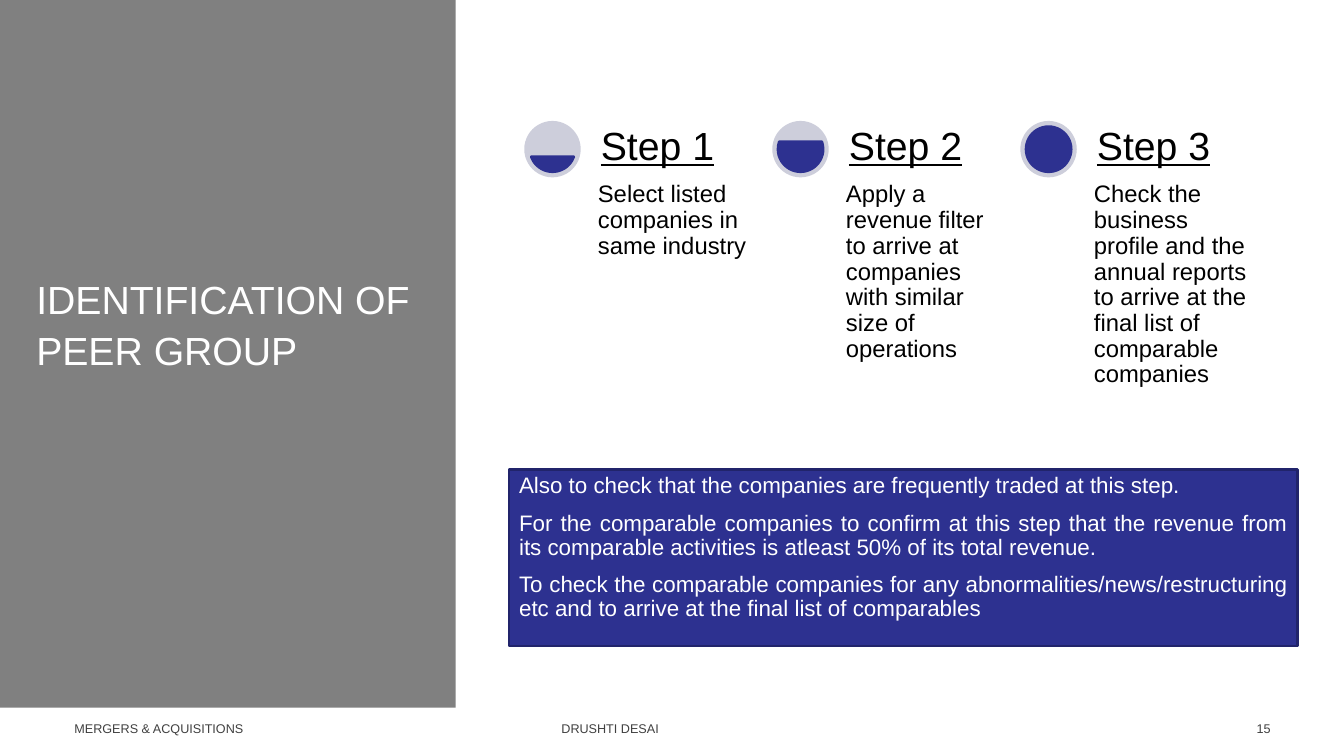
import math

import pptx
import pptx.dml.color
import pptx.enum.shapes
import pptx.enum.text
import pptx.oxml
import pptx.oxml.ns
import pptx.util
from pptx.util import Inches

ALIGN = pptx.enum.text.PP_ALIGN
ANCHOR = pptx.enum.text.MSO_ANCHOR
SHAPE = pptx.enum.shapes.MSO_SHAPE

NAVY, NAVY_EDGE, PALE = "2D3190", "21246B", "CDCEDB"
GREY, WHITE, BLACK, FOOTER_GREY = "808080", "FFFFFF", "000000", "404040"

STEPS = [
    ("Step 1", "Select listed companies in same industry"),
    ("Step 2", "Apply a revenue filter to arrive at companies with similar size of operations"),
    ("Step 3", "Check the business profile and the annual reports to arrive at the final list "
               "of comparable companies"),
]
CHECKS = [
    "Also to check that the companies are frequently traded at this step.",
    "For the comparable companies to confirm at this step that the revenue from its "
    "comparable activities is atleast 50% of its total revenue.",
    "To check the comparable companies for any abnormalities/news/restructuring etc and to "
    "arrive at the final list of comparables",
]


def color(hex_value):
    """Return the colour for a hex string."""
    return pptx.dml.color.RGBColor.from_string(hex_value)


def write(holder, *paragraphs, size, ink, align=ALIGN.LEFT, anchor=ANCHOR.TOP, insets=(0.1, 0.05),
          spacing=1.0, before=0, after=0, underline=None, tab=None):
    """Write formatted paragraphs into a shape, text box or placeholder."""
    frame = holder.text_frame
    frame.word_wrap = True
    frame.auto_size = pptx.enum.text.MSO_AUTO_SIZE.NONE
    frame.vertical_anchor = anchor
    frame.margin_left = frame.margin_right = Inches(insets[0])
    frame.margin_top = frame.margin_bottom = Inches(insets[1])
    for index, text in enumerate(paragraphs):
        paragraph = frame.add_paragraph() if index else frame.paragraphs[0]
        paragraph.alignment = align
        paragraph.line_spacing = spacing
        paragraph.space_before = pptx.util.Pt(before if index else 0)
        paragraph.space_after = pptx.util.Pt(after)
        if tab:
            stops = pptx.oxml.parse_xml(
                f'<a:tabLst {pptx.oxml.ns.nsdecls("a")}><a:tab pos="{Inches(tab)}" algn="l"/></a:tabLst>')
            paragraph._p.get_or_add_pPr().append(stops)
        run = paragraph.add_run()
        run.text = text
        run.font.name = "Arial"
        run.font.size = pptx.util.Pt(size)
        run.font.color.rgb = color(ink)
        run.font.underline = underline


def add_label(slide, box, *paragraphs, **text_format):
    """Add a text box with formatted text."""
    write(slide.shapes.add_textbox(*map(Inches, box)), *paragraphs, **text_format)


def add_filled(slide, preset, box, fill, edge=None):
    """Add a flat filled preset shape with an optional outline."""
    shape = slide.shapes.add_shape(preset, *map(Inches, box))
    shape.shadow.inherit = False
    shape.fill.solid()
    shape.fill.fore_color.rgb = color(fill)
    if edge:
        shape.line.color.rgb = color(edge)
        shape.line.width = pptx.util.Pt(1.75)
    else:
        shape.line.fill.background()
    return shape


def add_title_panel(slide, box):
    """Place the grey side panel behind the slide title."""
    left, top, width, height = box
    panel = add_filled(slide, SHAPE.RECTANGLE, box, GREY)
    slide.shapes._spTree.insert(2, panel._element)
    title = slide.shapes.title
    title.left, title.top = Inches(left + 0.26), Inches(top + 1.87)
    title.width, title.height = Inches(width - 0.57), Inches(1.88)
    write(title, "IDENTIFICATION OF PEER GROUP", size=28, ink=WHITE,
          anchor=ANCHOR.BOTTOM, spacing=1.07)


def add_gauge(slide, left, top, size, level):
    """Draw a round gauge filled from the bottom to the given level."""
    rim = 0.055
    add_filled(slide, SHAPE.OVAL, (left, top, size, size), PALE)
    inner = size - 2 * rim
    liquid = add_filled(slide, SHAPE.CHORD, (left + rim, top + rim, inner, inner), NAVY, NAVY)
    surface = math.degrees(math.asin(1 - 2 * level))
    for index, angle in enumerate((surface % 360, 180 - surface)):
        liquid.adjustments[index] = angle * 60000 / 100000


def add_steps(slide, box):
    """Lay out the steps in equal columns, each with a fuller gauge."""
    left, top, width, height = box
    pitch = width / len(STEPS)
    gauge, indent, column = 0.56, 0.68, 1.66
    for index, (heading, detail) in enumerate(STEPS):
        x = left + index * pitch
        add_gauge(slide, x, top, gauge, (index + 1) / len(STEPS))
        add_label(slide, (x + indent, top + gauge, column, height - gauge), detail,
                  size=17, ink=BLACK, insets=(0.05, 0.05), spacing=0.9)
        add_label(slide, (x + indent, top, column, gauge), heading, size=28, ink=BLACK,
                  anchor=ANCHOR.BOTTOM, insets=(0.08, 0.08), spacing=0.9, underline=True)


def add_checks(slide, box):
    """Add the navy box of checks."""
    write(add_filled(slide, SHAPE.RECTANGLE, box, NAVY, NAVY_EDGE), *CHECKS, size=16, ink=WHITE,
          align=ALIGN.JUSTIFY, spacing=0.9, before=3.2, after=6)


def add_footer(slide, box):
    """Add the footer line and the page number at its right end."""
    left, top, width, height = box
    number = 1.15
    add_label(slide, (left, top, 7.56, height), "MERGERS & ACQUISITIONS\tDRUSHTI DESAI",
              size=9, ink=FOOTER_GREY, anchor=ANCHOR.MIDDLE, tab=4.83)
    add_label(slide, (left + width - number, top, number, height), "15",
              size=9, ink=FOOTER_GREY, anchor=ANCHOR.MIDDLE, align=ALIGN.RIGHT)


def main():
    """Build and save the slide."""
    deck = pptx.Presentation()
    deck.slide_width, deck.slide_height = Inches(13.33), Inches(7.5)
    slide = deck.slides.add_slide(deck.slide_layouts[5])
    add_title_panel(slide, (0, 0, 4.52, 7.02))
    add_checks(slide, (5.05, 4.66, 7.82, 1.75))
    add_footer(slide, (0.64, 7.03, 12.06, 0.4))
    add_steps(slide, (5.2, 1.2, 7.38, 2.94))
    deck.save("out.pptx")


if __name__ == "__main__":
    main()
